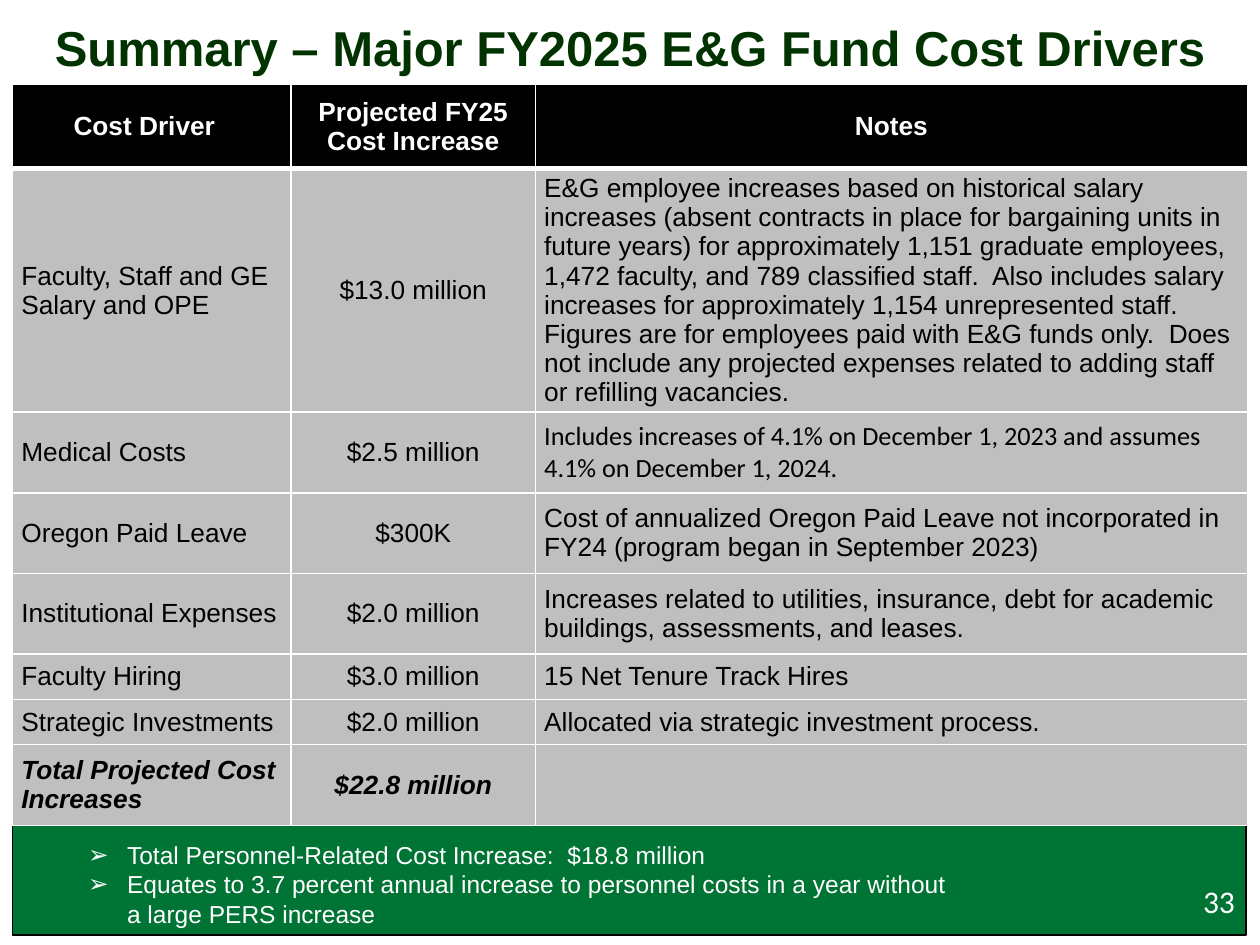
from lxml.etree import SubElement
from pptx import Presentation
from pptx.dml.color import RGBColor
from pptx.enum.shapes import MSO_SHAPE
from pptx.enum.text import MSO_ANCHOR, MSO_AUTO_SIZE, PP_ALIGN
from pptx.oxml import parse_xml
from pptx.oxml.ns import nsdecls, qn
from pptx.util import Inches, Pt

BLACK = RGBColor(0x00, 0x00, 0x00)
WHITE = RGBColor(0xFF, 0xFF, 0xFF)
GREY = RGBColor(0xBF, 0xBF, 0xBF)
GREEN = RGBColor(0x00, 0x74, 0x34)
DARK = RGBColor(0x00, 0x33, 0x00)

COLS = [2.21, 1.94, 5.65]
HEIGHTS = [0.67, 1.75, 0.64, 0.64, 0.64, 0.36, 0.36, 0.64]
ROWS = [
    ("Cost Driver", "Projected FY25 Cost Increase", "Notes"),
    ("Faculty, Staff and GE Salary and OPE", "$13.0 million",
     "E&G employee increases based on historical salary increases (absent "
     "contracts in place for bargaining units in future years) for "
     "approximately 1,151 graduate employees, 1,472 faculty, and 789 "
     "classified staff.  Also includes salary increases for approximately "
     "1,154 unrepresented staff. Figures are for employees paid with E&G "
     "funds only.  Does not include any projected expenses related to "
     "adding staff or refilling vacancies."),
    ("Medical Costs", "$2.5 million",
     "Includes increases of 4.1% on December 1, 2023 and assumes 4.1% on "
     "December 1, 2024."),
    ("Oregon Paid Leave", "$300K",
     "Cost of annualized Oregon Paid Leave not incorporated in FY24 "
     "(program began in September 2023)"),
    ("Institutional Expenses", "$2.0 million",
     "Increases related to utilities, insurance, debt for academic "
     "buildings, assessments, and leases."),
    ("Faculty Hiring", "$3.0 million", "15 Net Tenure Track Hires"),
    ("Strategic Investments", "$2.0 million",
     "Allocated via strategic investment process."),
    ("Total Projected Cost Increases", "$22.8 million", ""),
]
POINTS = [
    "Total Personnel-Related Cost Increase:  $18.8 million",
    "Equates to 3.7 percent annual increase to personnel costs in a year "
    "without",
    "a large PERS increase",
]


class Deck:
    def __init__(self):
        self.prs = Presentation()
        self.prs.slide_width = Inches(10)
        self.prs.slide_height = Inches(7.5)
        self.slide = self.prs.slides.add_slide(self.prs.slide_layouts[5])
        self.shapes = self.slide.shapes

    def style(self, para, size, color, align=PP_ALIGN.LEFT, name="Arial",
              bold=False, italic=False):
        para.alignment = align
        font = para.font
        font.name, font.size = name, Pt(size)
        font.bold, font.italic = bold, italic
        font.color.rgb = color

    def title(self, text, *box):
        shape = self.shapes.title
        shape.left, shape.top, shape.width, shape.height = map(Inches, box)
        frame = shape.text_frame
        frame.text = text
        frame.auto_size = MSO_AUTO_SIZE.NONE
        frame.vertical_anchor = MSO_ANCHOR.MIDDLE
        self.style(frame.paragraphs[0], 28, DARK, PP_ALIGN.CENTER, bold=True)

    def banner(self, points, *box):
        shape = self.shapes.add_shape(MSO_SHAPE.RECTANGLE, *map(Inches, box))
        shape.shadow.inherit = False
        shape.fill.solid()
        shape.fill.fore_color.rgb = GREEN
        shape.line.color.rgb = BLACK
        shape.line.width = Pt(0.75)
        frame = shape.text_frame
        frame.word_wrap = True
        frame.vertical_anchor = MSO_ANCHOR.TOP
        frame.text = "\n".join(points)
        paras = frame.paragraphs
        for para in paras:
            self.style(para, 14, WHITE)
            para.level = 1
            self.indent(para, bullet=para is not paras[-1])
        paras[0].line_spacing = 1.5

    def indent(self, para, bullet):
        props = para._p.get_or_add_pPr()
        props.set("marL", str(Inches(0.81)))
        props.set("indent", str(Inches(-0.31) if bullet else 0))
        if bullet:
            SubElement(props, qn("a:buFont"), typeface="Wingdings 3")
            props[-1].set("typeface", "Arial")
            SubElement(props, qn("a:buChar"), char="➢")

    def table(self, rows, left, top):
        grid = self.shapes.add_table(
            len(rows), len(COLS), Inches(left), Inches(top),
            Inches(sum(COLS)), Inches(sum(HEIGHTS))).table
        for col, width in zip(grid.columns, COLS):
            col.width = Inches(width)
        for r, texts in enumerate(rows):
            grid.rows[r].height = Inches(HEIGHTS[r])
            head, total = r == 0, r == len(rows) - 1
            for c, text in enumerate(texts):
                cell = grid.cell(r, c)
                self.cell(cell, text, BLACK if head else GREY)
                self.edges(cell, top=3 if r == 1 else 1,
                           bottom=3 if head else 1)
                center = head or c == 1
                self.style(
                    cell.text_frame.paragraphs[0], 15,
                    WHITE if head else BLACK,
                    PP_ALIGN.CENTER if center else PP_ALIGN.LEFT,
                    "Calibri" if (r, c) == (2, 2) else "Arial",
                    head or total, total)
        # The first heading sits slightly left of centre.
        grid.cell(0, 0).margin_right = Inches(0.19)

    def cell(self, cell, text, fill):
        cell.text = text
        cell.vertical_anchor = MSO_ANCHOR.MIDDLE
        cell.margin_left = cell.margin_right = Inches(0.07)
        cell.margin_top = cell.margin_bottom = Inches(0.04)
        cell.fill.solid()
        cell.fill.fore_color.rgb = fill

    def edges(self, cell, top, bottom):
        """Draw white cell borders; widths are in points."""
        props = cell._tc.get_or_add_tcPr()
        sides = {"L": 1, "R": 1, "T": top, "B": bottom}
        for i, (side, width) in enumerate(sides.items()):
            props.insert(i, parse_xml(
                f'<a:ln{side} {nsdecls("a")} w="{Pt(width)}"><a:solidFill>'
                f'<a:srgbClr val="{WHITE}"/></a:solidFill></a:ln{side}>'))

    def number(self, text, *box):
        frame = self.shapes.add_textbox(*map(Inches, box)).text_frame
        frame.word_wrap = True
        frame.text = text
        self.style(frame.paragraphs[0], 18, WHITE, PP_ALIGN.RIGHT, "Calibri")


def main():
    deck = Deck()
    deck.title("Summary – Major FY2025 E&G Fund Cost Drivers",
               0, -0.08, 10, 0.91)
    deck.banner(POINTS, 0.1, 6.5, 9.79, 0.92)
    deck.table(ROWS, 0.1, 0.67)
    deck.number("33", 7.67, 6.95, 2.23, 0.4)
    deck.prs.save("out.pptx")


if __name__ == "__main__":
    main()
